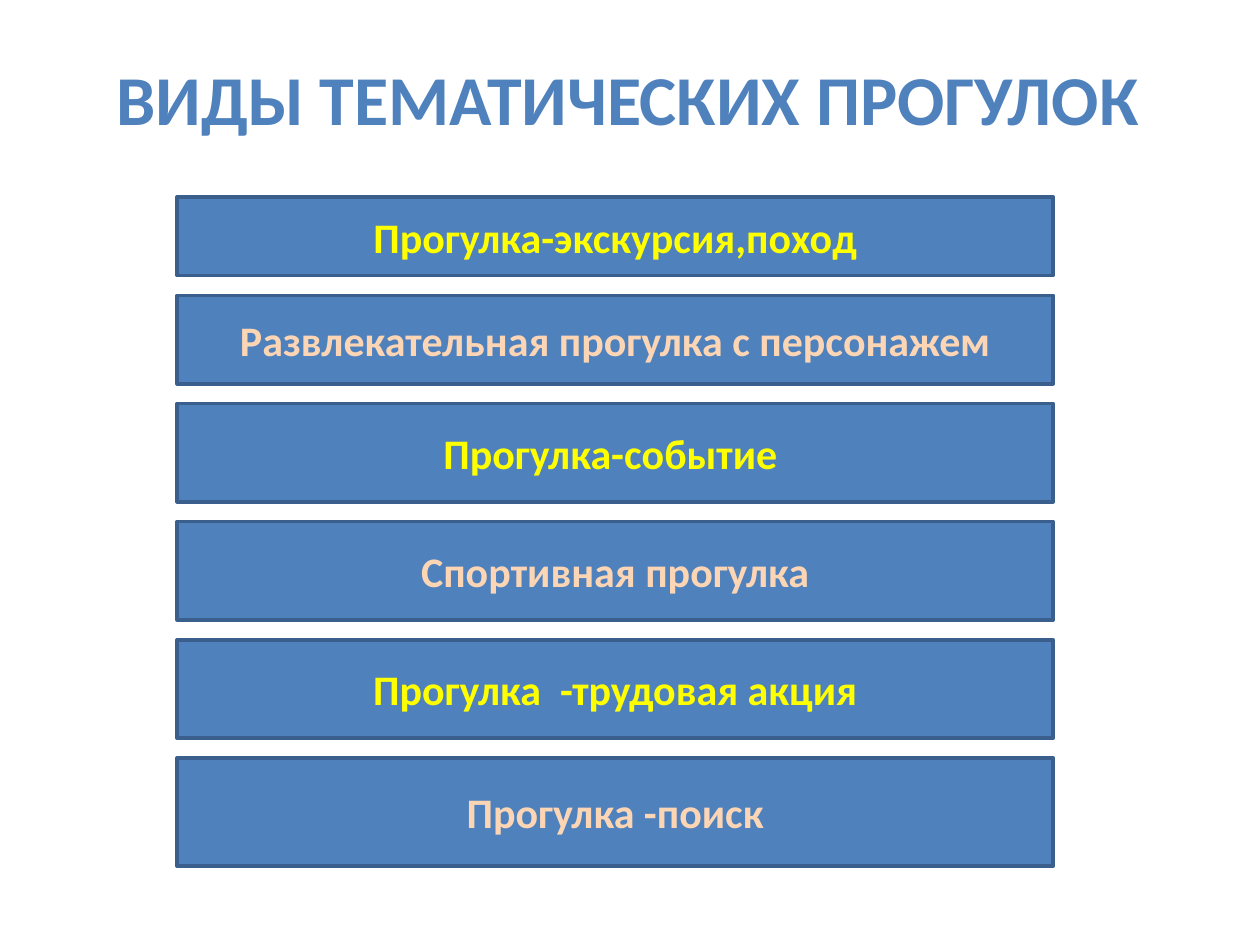
from itertools import cycle

from pptx import Presentation
from pptx.dml.color import RGBColor
from pptx.enum.shapes import MSO_SHAPE as Shape
from pptx.enum.text import MSO_ANCHOR as Anchor, PP_ALIGN as Align
from pptx.util import Pt

COLORS = {
    "blue": "4F81BD",
    "border": "3A5F8C",
    "yellow": "FFFF00",
    "peach": "FCD5B5",
}
TITLE = "ВИДЫ ТЕМАТИЧЕСКИХ ПРОГУЛОК"
# Each kind of walk with the height of its bar
WALKS = [
    ("Прогулка-экскурсия,поход", 45),
    ("Развлекательная прогулка с персонажем", 50.6),
    ("Прогулка-событие ", 56.25),
    ("Спортивная прогулка", 56.25),
    ("Прогулка  -трудовая акция", 56.25),
    ("Прогулка -поиск", 61.9),
]
BAR_LEFT, BAR_TOP, BAR_WIDTH, BAR_GAP = 101.25, 112.5, 500.6, 11.25


def color(name):
    return RGBColor.from_string(COLORS[name])


def write(frame, text, *, size, ink, font="Calibri", bold=True,
          align=Align.CENTER, anchor=Anchor.MIDDLE):
    frame.word_wrap = True
    frame.vertical_anchor = anchor
    para = frame.paragraphs[0]
    para.alignment = align
    span = para.add_run()
    span.text = text
    span.font.name = font
    span.font.size = Pt(size)
    span.font.bold = bold
    span.font.color.rgb = color(ink)


class Page:
    """Holds the style and the current slide."""

    title_size = 40
    bar_size = 24
    border_width = 2

    def __init__(self, deck):
        self.slide = deck.slides.add_slide(deck.slide_layouts[5])

    def title(self, text, left, top, width, height):
        box = self.slide.shapes.title
        box.left, box.top = Pt(left), Pt(top)
        box.width, box.height = Pt(width), Pt(height)
        write(box.text_frame, text, size=self.title_size, ink="blue",
              anchor=Anchor.TOP)

    def bar(self, text, left, top, width, height, ink):
        box = self.slide.shapes.add_shape(
            Shape.RECTANGLE, Pt(left), Pt(top), Pt(width), Pt(height))
        box.shadow.inherit = False
        box.fill.solid()
        box.fill.fore_color.rgb = color("blue")
        box.line.color.rgb = color("border")
        box.line.width = Pt(self.border_width)
        write(box.text_frame, text, size=self.bar_size, ink=ink)


def main():
    deck = Presentation()
    deck.slide_width, deck.slide_height = Pt(720), Pt(540)
    page = Page(deck)

    # Heading
    page.title(TITLE, 28.1, 28.1, 661, 55.7)

    # Stack of bars with equal gaps and alternating text colours
    top = BAR_TOP
    for (text, height), ink in zip(WALKS, cycle(["yellow", "peach"])):
        page.bar(text, BAR_LEFT, top, BAR_WIDTH, height, ink)
        top += height + BAR_GAP

    deck.save("out.pptx")


if __name__ == "__main__":
    main()
